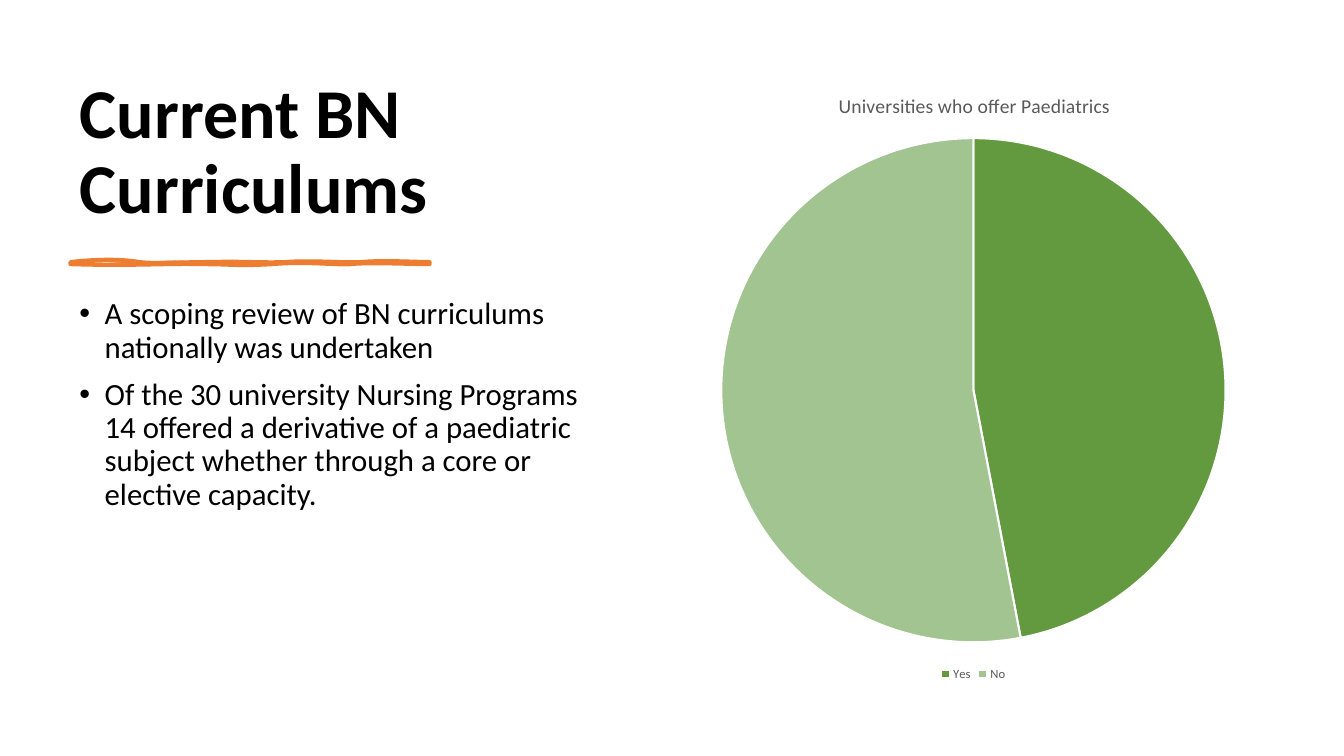
from dataclasses import dataclass

from lxml.etree import SubElement
from pptx import Presentation
from pptx.chart.data import CategoryChartData
from pptx.dml.color import RGBColor
from pptx.enum.chart import XL_CHART_TYPE, XL_LEGEND_POSITION
from pptx.enum.text import MSO_ANCHOR, MSO_AUTO_SIZE, PP_ALIGN
from pptx.oxml import parse_xml
from pptx.oxml.ns import nsdecls, qn
from pptx.util import Inches, Pt


@dataclass(frozen=True)
class Theme:
    font: str = "Calibri"
    text: RGBColor = RGBColor.from_string("000000")
    chart_text: RGBColor = RGBColor.from_string("595959")
    accent: RGBColor = RGBColor.from_string("ED7D31")
    separator: RGBColor = RGBColor.from_string("FFFFFF")
    slices: tuple = (RGBColor.from_string("639A3F"), RGBColor.from_string("A1C490"))
    title_size: int = 50
    body_size: int = 22
    chart_title_size: int = 14
    chart_size: int = 10
    legend_size: int = 9


THEME = Theme()

# Boxes are left, top, width, height in inches
TITLE_BOX = (0.69, 0.7, 5.27, 1.62)
STROKE_BOX = (0.7, 2.6, 3.56, 0.02)
BODY_BOX = (0.69, 2.91, 5.27, 3.88)
CHART_BOX = (6.67, 0.7, 5.97, 6.1)

BULLETS = (
    "A scoping review of BN curriculums nationally was undertaken",
    "Of the 30 university Nursing Programs 14 offered a derivative of a "
    "paediatric subject whether through a core or elective capacity.",
)

# Cubic curves, offset from the stroke's corner: two controls and an end each
OUTLINE_CURVES = (
    ((0.27, -0.03), (0.51, -0.03), (0.68, 0)),
    ((0.85, 0.02), (1.07, 0), (1.39, 0)),
    ((1.71, -0.01), (1.9, 0.01), (2.14, 0)),
    ((2.38, -0.02), (2.69, 0.01), (2.89, 0)),
    ((3.09, -0.02), (3.42, 0), (3.56, 0)),
    ((3.56, 0), (3.56, 0.01), (3.56, 0.02)),
    ((3.38, 0.02), (2.94, 0), (2.78, 0.02)),
    ((2.62, 0.03), (2.34, -0.01), (2, 0.02)),
    ((1.65, 0.04), (1.61, 0.02), (1.29, 0.02)),
    ((0.96, 0.01), (0.62, 0.04), (0, 0.02)),
    ((0, 0.01), (0, 0), (0, 0)),
)
FILL_CURVES = (
    ((0.32, 0.02), (0.4, 0), (0.68, 0)),
    ((0.96, -0.01), (0.99, -0.03), (1.29, 0)),
    ((1.58, 0.02), (1.91, 0.01), (2.07, 0)),
    ((2.23, -0.02), (2.57, 0.02), (2.74, 0)),
    ((2.92, -0.03), (3.27, 0.03), (3.56, 0)),
    ((3.56, 0), (3.56, 0.01), (3.56, 0.02)),
    ((3.42, 0.01), (3.02, 0.04), (2.85, 0.02)),
    ((2.68, -0.01), (2.39, 0.02), (2.07, 0.02)),
    ((1.74, 0.01), (1.7, 0), (1.46, 0.02)),
    ((1.23, 0.03), (1.09, 0.01), (0.75, 0.02)),
    ((0.41, 0.02), (0.22, 0.01), (0, 0.02)),
    ((0, 0.01), (0, 0), (0, 0)),
)


def style_font(font, size, color, bold=False):
    font.name = THEME.font
    font.size = Pt(size)
    font.bold = bold
    font.color.rgb = color


def add_title(slide, box):
    title = slide.shapes.title
    title.left, title.top, title.width, title.height = map(Inches, box)
    frame = title.text_frame
    frame.word_wrap = True
    frame.auto_size = MSO_AUTO_SIZE.NONE
    frame.vertical_anchor = MSO_ANCHOR.BOTTOM
    paragraph = frame.paragraphs[0]
    paragraph.alignment = PP_ALIGN.LEFT
    paragraph.line_spacing = 0.9
    run = paragraph.add_run()
    run.text = "Current BN Curriculums"
    style_font(run.font, THEME.title_size, THEME.text, bold=True)


def add_bullets(slide, box):
    frame = slide.shapes.add_textbox(*map(Inches, box)).text_frame
    frame.word_wrap = True
    for index, text in enumerate(BULLETS):
        paragraph = frame.add_paragraph() if index else frame.paragraphs[0]
        paragraph.line_spacing = 0.9
        paragraph.space_before = Pt(10)
        properties = paragraph._p.get_or_add_pPr()
        properties.set("marL", str(Inches(0.25)))
        properties.set("indent", str(Inches(-0.25)))
        SubElement(properties, qn("a:buFont")).set("typeface", "Arial")
        SubElement(properties, qn("a:buChar")).set("char", "•")
        run = paragraph.add_run()
        run.text = text
        style_font(run.font, THEME.body_size, THEME.text)


def add_curved_outline(outlines, curves, width, height, **options):
    """Add a closed chain of cubic curves that starts at the box's corner."""
    outline = SubElement(outlines, qn("a:path"), w=str(width), h=str(height), **options)
    SubElement(SubElement(outline, qn("a:moveTo")), qn("a:pt"), x="0", y="0")
    for curve in curves:
        bezier = SubElement(outline, qn("a:cubicBezTo"))
        for x, y in curve:
            SubElement(bezier, qn("a:pt"), x=str(Inches(x)), y=str(Inches(y)))
    SubElement(outline, qn("a:close"))


def add_brush_stroke(slide, box):
    left, top, width, height = map(Inches, box)
    builder = slide.shapes.build_freeform(left, top)
    builder.add_line_segments(
        [(left + width, top), (left + width, top + height), (left, top + height)]
    )
    shape = builder.convert_to_shape()
    shape.shadow.inherit = False
    shape.fill.solid()
    shape.fill.fore_color.rgb = THEME.accent
    shape.line.color.rgb = THEME.accent
    shape.line.width = Pt(3)
    SubElement(shape.line._get_or_add_ln(), qn("a:round"))

    # Curved edges replace the straight ones
    outlines = next(shape._element.iter(qn("a:pathLst")))
    for straight in list(outlines):
        outlines.remove(straight)
    add_curved_outline(outlines, OUTLINE_CURVES, width, height, fill="none")
    add_curved_outline(outlines, FILL_CURVES, width, height, stroke="0")


def manual_layout(target="", **places):
    """Build a chart layout element from fractions of the chart's size."""
    inner = f'<c:layoutTarget val="{target}"/>' if target else ""
    inner += "".join(f'<c:{axis}Mode val="edge"/>' for axis in "xy")
    inner += "".join(f'<c:{name} val="{value}"/>' for name, value in places.items())
    return parse_xml(
        f'<c:layout {nsdecls("c")}><c:manualLayout>{inner}</c:manualLayout></c:layout>'
    )


def add_pie(slide, box):
    data = CategoryChartData()
    data.categories = ("Yes", "No")
    data.add_series("Series 1", (47, 53))
    chart = slide.shapes.add_chart(XL_CHART_TYPE.PIE, *map(Inches, box), data).chart
    style_font(chart.font, THEME.chart_size, THEME.text)

    # Chart title
    chart.has_title = True
    run = chart.chart_title.text_frame.paragraphs[0].add_run()
    run.text = "Universities who offer Paediatrics"
    style_font(run.font, THEME.chart_title_size, THEME.chart_text)
    title = chart.chart_title._element
    for layout in title.findall(qn("c:layout")):
        title.remove(layout)
    title.find(qn("c:tx")).addnext(manual_layout(x=0.27, y=0.03))

    # Slices
    plot = chart.plots[0]
    plot.vary_by_categories = True
    for index, color in enumerate(THEME.slices):
        slice_format = plot.series[0].points[index].format
        slice_format.fill.solid()
        slice_format.fill.fore_color.rgb = color
        slice_format.line.color.rgb = THEME.separator
        slice_format.line.width = Pt(1.5)
    plot_area = chart._chartSpace.chart.plotArea
    for layout in plot_area.findall(qn("c:layout")):
        plot_area.remove(layout)
    plot_area.insert(0, manual_layout("inner", x=0.08, y=0.11, w=0.84, h=0.82))

    # Legend
    chart.has_legend = True
    chart.legend.position = XL_LEGEND_POSITION.BOTTOM
    chart.legend.include_in_layout = False
    style_font(chart.legend.font, THEME.legend_size, THEME.chart_text)


def main():
    presentation = Presentation()
    presentation.slide_width, presentation.slide_height = Inches(13.33), Inches(7.5)
    slide = presentation.slides.add_slide(presentation.slide_layouts.get_by_name("Title Only"))
    add_title(slide, TITLE_BOX)
    add_brush_stroke(slide, STROKE_BOX)
    add_bullets(slide, BODY_BOX)
    add_pie(slide, CHART_BOX)
    presentation.save("out.pptx")


if __name__ == "__main__":
    main()
